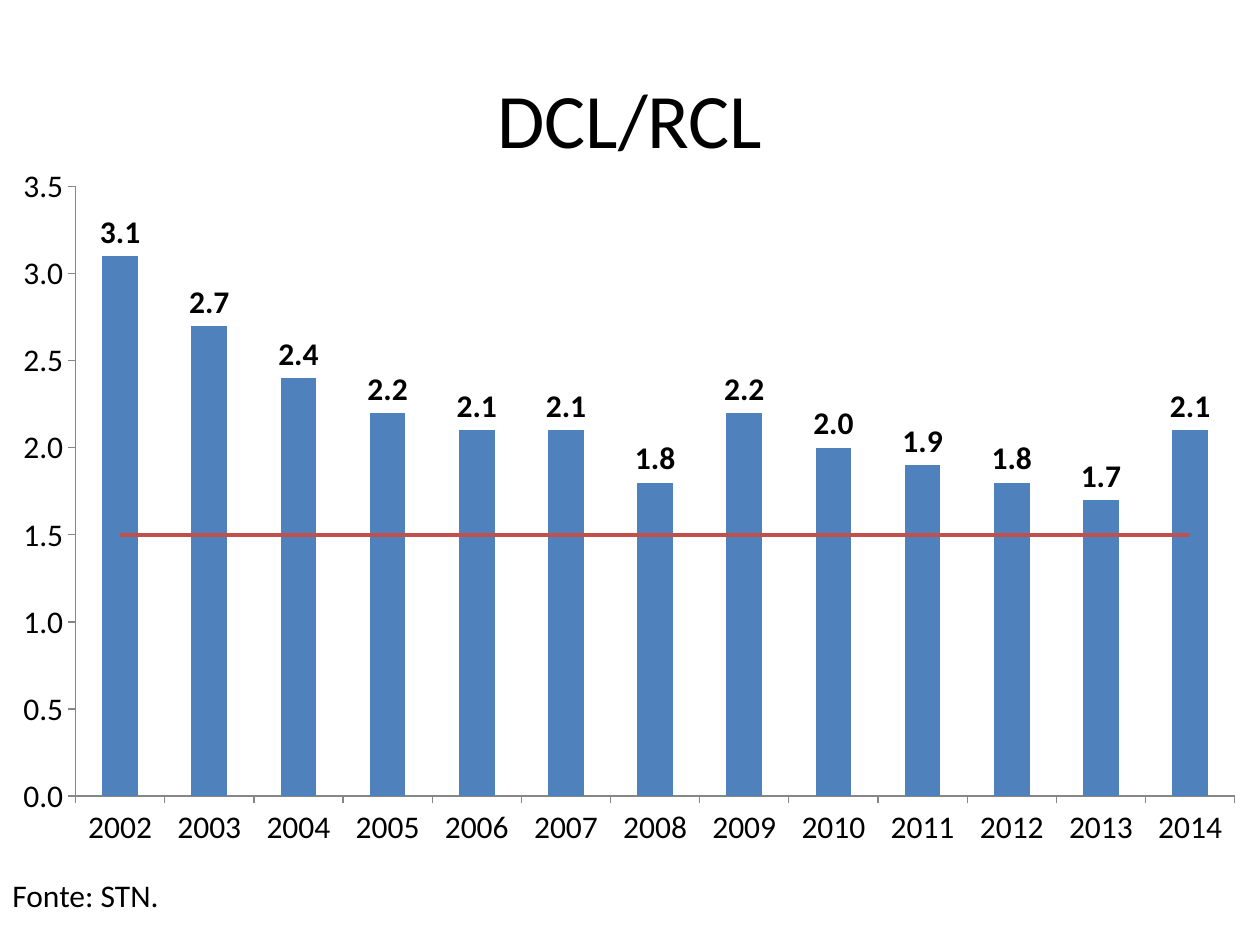
from pptx import Presentation
from pptx import util as u
from pptx.chart.data import CategoryChartData
from pptx.dml.color import RGBColor
from pptx.enum import chart as charts, text
from pptx.oxml import parse_xml
from pptx.oxml.ns import nsdecls, qn

BLACK = RGBColor(0x00, 0x00, 0x00)
BLUE = RGBColor(0x4F, 0x81, 0xBD)
RED = RGBColor(0xC0, 0x50, 0x4D)
GREY = RGBColor(0x86, 0x86, 0x86)

YEARS = [str(year) for year in range(2002, 2015)]
RATIOS = [3.1, 2.7, 2.4, 2.2, 2.1, 2.1, 1.8, 2.2, 2.0, 1.9, 1.8, 1.7, 2.1]
LIMIT = 1.5


class Page:
    font = "Calibri"
    body = 18

    def __init__(self, deck):
        self.width, self.height = deck.slide_width, deck.slide_height
        self.shapes = deck.slides.add_slide(deck.slide_layouts[6]).shapes

    def area(self, left, top, width, height):
        return (int(left * self.width), int(top * self.height),
                int(width * self.width), int(height * self.height))

    def style(self, font, size, bold=False):
        font.name, font.size, font.bold = self.font, u.Pt(size), bold
        font.color.rgb = BLACK

    def text(self, share, words, size, align, anchor):
        frame = self.shapes.add_textbox(*self.area(*share)).text_frame
        frame.word_wrap = True
        frame.vertical_anchor = anchor
        para = frame.paragraphs[0]
        para.alignment = align
        span = para.add_run()
        span.text = words
        self.style(span.font, size)

    def axis(self, axis):
        axis.has_major_gridlines = False
        axis.major_tick_mark = charts.XL_TICK_MARK.OUTSIDE
        axis.minor_tick_mark = charts.XL_TICK_MARK.NONE
        axis.format.line.color.rgb = GREY
        axis.format.line.width = u.Pt(0.75)
        self.style(axis.tick_labels.font, self.body)

    def line_plot(self, area):
        columns = area.find(qn("c:barChart"))
        line = parse_xml(
            f'<c:lineChart {nsdecls("c")}><c:grouping val="standard"/>'
            '<c:varyColors val="0"/></c:lineChart>')
        series = columns.findall(qn("c:ser"))[1]
        for invert in series.findall(qn("c:invertIfNegative")):
            series.remove(invert)
        line.append(series)
        line.append(parse_xml(f'<c:marker {nsdecls("c")} val="1"/>'))
        for axis in columns.findall(qn("c:axId")):
            line.append(parse_xml(f'<c:axId {nsdecls("c")} val="{axis.get("val")}"/>'))
        columns.addnext(line)

    def plot_layout(self, area, **shares):
        for old in area.findall(qn("c:layout")):
            area.remove(old)
        places = "".join(f'<c:{key} val="{value}"/>' for key, value in shares.items())
        area.insert(0, parse_xml(
            f'<c:layout {nsdecls("c")}><c:manualLayout><c:layoutTarget val="inner"/>'
            '<c:xMode val="edge"/><c:yMode val="edge"/>'
            f'{places}</c:manualLayout></c:layout>'))

    def chart(self, share):
        data = CategoryChartData(number_format="0.0")
        data.categories = YEARS
        data.add_series("DCL/RCL", RATIOS)
        data.add_series("Limite", [LIMIT] * len(YEARS))
        chart = self.shapes.add_chart(
            charts.XL_CHART_TYPE.COLUMN_CLUSTERED, *self.area(*share), data).chart
        chart.has_title = chart.has_legend = False
        self.style(chart.font, 10)

        area = chart.plots[0]._element.getparent()
        self.line_plot(area)
        self.plot_layout(area, x=0.06, y=0.05, w=0.92, h=0.86)

        self.axis(chart.category_axis)
        values = chart.value_axis
        self.axis(values)
        values.minimum_scale, values.maximum_scale, values.major_unit = 0, 3.5, 0.5
        values.tick_labels.number_format = "0.0"
        values.tick_labels.number_format_is_linked = False

        columns, limit = chart.plots
        columns.gap_width = 150
        columns.vary_by_categories = False
        bars = columns.series[0]
        bars.format.fill.solid()
        bars.format.fill.fore_color.rgb = BLUE
        labels = bars.data_labels
        labels.show_value = True
        labels.number_format, labels.number_format_is_linked = "0.0", False
        labels.position = charts.XL_LABEL_POSITION.OUTSIDE_END
        self.style(labels.font, self.body, bold=True)

        line = limit.series[0]
        line.smooth = False
        line.marker.style = charts.XL_MARKER_STYLE.NONE
        line.format.line.color.rgb = RED
        line.format.line.width = u.Pt(2.25)


def main():
    deck = Presentation()
    deck.slide_width, deck.slide_height = u.Inches(10), u.Inches(7.5)
    page = Page(deck)
    page.text((0.05, 0.04, 0.9, 0.17), "DCL/RCL", 44,
              text.PP_ALIGN.CENTER, text.MSO_ANCHOR.MIDDLE)
    page.chart((0, 0.16, 1, 0.75))
    page.text((0, 0.92, 1, 0.05), "Fonte: STN.", page.body,
              text.PP_ALIGN.LEFT, text.MSO_ANCHOR.TOP)
    deck.save("out.pptx")


if __name__ == "__main__":
    main()
